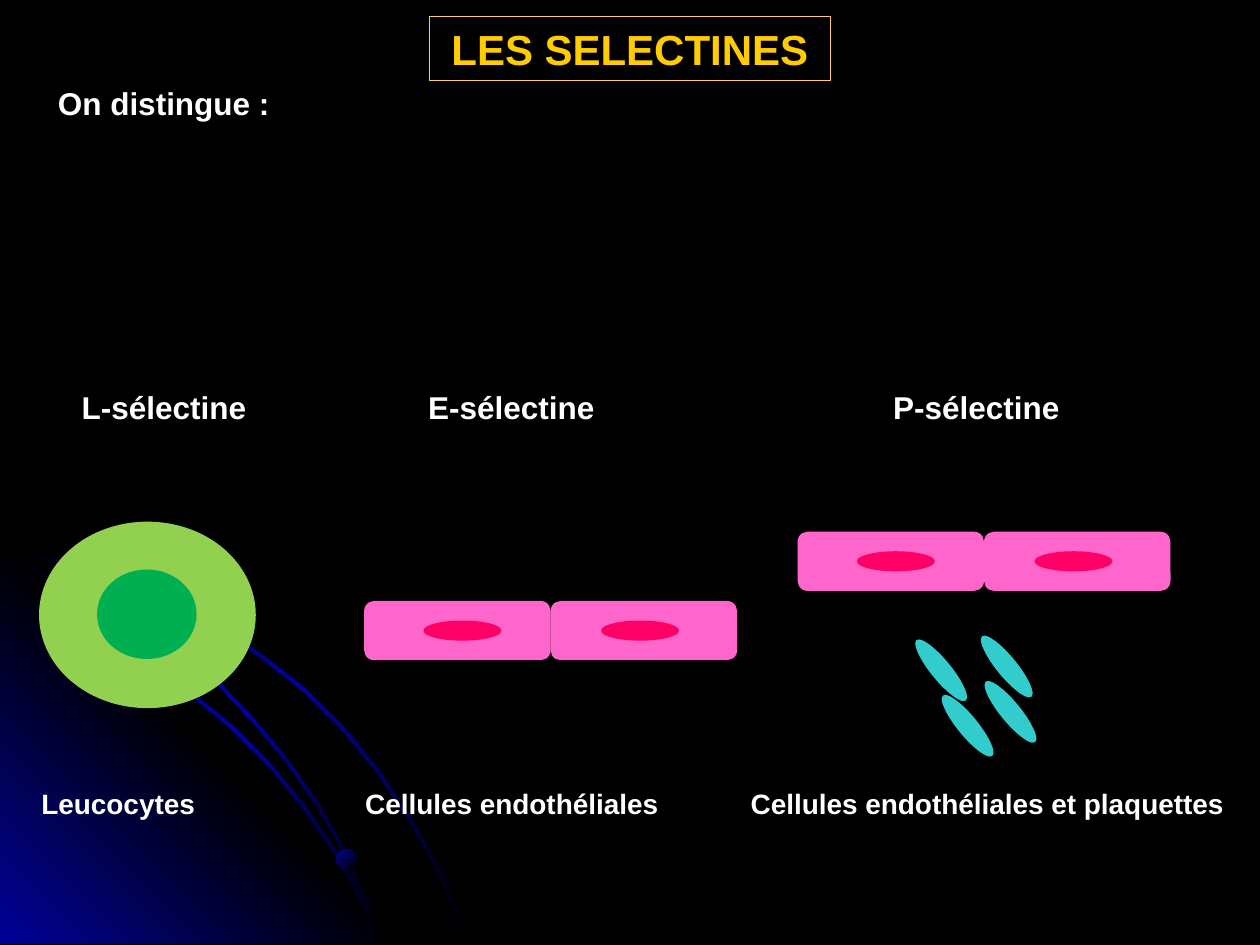
from copy import deepcopy

from lxml import etree
from pptx import Presentation
from pptx.dml.color import RGBColor
from pptx.enum.shapes import MSO_SHAPE
from pptx.enum.text import MSO_ANCHOR, PP_ALIGN
from pptx.oxml.ns import qn
from pptx.util import Inches, Pt

BLACK = RGBColor(0x00, 0x00, 0x00)
WHITE = RGBColor(0xFF, 0xFF, 0xFF)
BLUE = RGBColor(0x01, 0x01, 0x99)
GOLD = RGBColor(0xFF, 0xCC, 0x00)
FRAME = RGBColor(0xFF, 0xCC, 0x66)
LIGHT_GREEN = RGBColor(0x92, 0xD0, 0x50)
GREEN = RGBColor(0x00, 0xB0, 0x50)
PINK = RGBColor(0xFF, 0x66, 0xCC)
RED = RGBColor(0xFF, 0x00, 0x66)
TURQUOISE = RGBColor(0x33, 0xCC, 0xCC)

prs = Presentation()
prs.slide_width, prs.slide_height = Inches(10), Inches(7.5)
s = prs.slides.add_slide(prs.slide_layouts[5])
s.background.fill.solid()
s.background.fill.fore_color.rgb = BLACK


def set_gradient(sp, colors, angle):
    """Spread the colours evenly; the angle runs counter-clockwise."""
    sp.shadow.inherit = False
    sp.line.fill.background()
    sp.fill.gradient()
    sp.fill.gradient_angle = angle
    stops = sp.fill._fill._gradFill.gsLst
    while len(stops) < len(colors):
        stops.append(deepcopy(stops[-1]))
    for i, (stop, color) in enumerate(zip(sp.fill.gradient_stops, colors)):
        stop.color.rgb = color
        stop.position = i / (len(colors) - 1)


def add_solid(kind, x, y, w, h, color):
    sp = s.shapes.add_shape(kind, Inches(x), Inches(y), Inches(w), Inches(h))
    sp.shadow.inherit = False
    sp.fill.solid()
    sp.fill.fore_color.rgb = color
    sp.line.fill.background()
    return sp


# Background: a glowing corner and three thin arcs, each the lower edge of a band
BOTTOM, BAND = 7.49, 0.02
corner = [(0, 4.27), (3.22, BOTTOM), (0, BOTTOM)]
arcs = [
    [(0, 4.38), (0.28, 4.43), (0.56, 4.49), (0.97, 4.61), (1.35, 4.78),
     (1.73, 4.99), (2.08, 5.23), (2.41, 5.49), (2.71, 5.79), (2.98, 6.12),
     (3.23, 6.49), (3.37, 6.73), (3.5, 6.98), (3.6, 7.23), (3.7, BOTTOM)],
    [(0, 4.77), (0.39, 4.9), (0.77, 5.07), (1.15, 5.28), (1.5, 5.51),
     (1.83, 5.78), (2.13, 6.08), (2.4, 6.41), (2.65, 6.77), (2.85, 7.14),
     (2.94, 7.32), (3.01, BOTTOM)],
    [(0, 4.44), (0.36, 4.57), (0.74, 4.75), (1.09, 4.94), (1.42, 5.18),
     (1.73, 5.44), (2.02, 5.75), (2.27, 6.05), (2.52, 6.41), (2.67, 6.67),
     (2.8, 6.94), (2.92, 7.22), (3.01, BOTTOM)],
]
outlines = []
for arc in arcs:
    upper = [(x + BAND if x else 0, y if y == BOTTOM else y - BAND) for x, y in arc]
    outlines.append((arc + upper[::-1], [BLACK, BLUE, BLACK], 315))
outlines.insert(1, (corner, [BLUE, BLACK, BLUE], 45))

for points, colors, angle in outlines:
    points = [(Inches(x), Inches(y)) for x, y in points]
    fb = s.shapes.build_freeform(*points[0])
    fb.add_line_segments(points[1:], close=True)
    set_gradient(fb.convert_to_shape(), colors, angle)

bead = add_solid(MSO_SHAPE.OVAL, 2.67, 6.74, 0.16, 0.16, BLUE)
set_gradient(bead, [BLUE, BLACK], 315)

# Title
title = s.shapes.title
title.left, title.top = Inches(3.41), Inches(0.13)
title.width, title.height = Inches(3.18), Inches(0.51)
title.line.color.rgb = FRAME
title.line.width = Pt(0.75)
tf = title.text_frame
tf.vertical_anchor = MSO_ANCHOR.MIDDLE
p = tf.paragraphs[0]
p.alignment = PP_ALIGN.CENTER
r = p.add_run()
r.text = "LES SELECTINES"
r.font.name, r.font.size, r.font.bold = "Arial", Pt(24), True
r.font.color.rgb = GOLD

# Leucocyte
add_solid(MSO_SHAPE.OVAL, 0.31, 4.14, 1.72, 1.48, LIGHT_GREEN)
add_solid(MSO_SHAPE.OVAL, 0.77, 4.52, 0.79, 0.71, GREEN)

# Pairs of endothelial cells
for x, y in [(2.89, 4.77), (6.33, 4.22)]:
    for i in range(2):
        add_solid(MSO_SHAPE.ROUNDED_RECTANGLE, x + 1.48 * i, y, 1.48, 0.47, PINK)
    for i in range(2):
        add_solid(MSO_SHAPE.OVAL, x + 0.47 + 1.41 * i, y + 0.155, 0.62, 0.16, RED)

# Platelets
for x, y in [(7.39, 5.01), (7.6, 5.45), (7.94, 5.34), (7.91, 4.98)]:
    add_solid(MSO_SHAPE.OVAL, x, y, 0.16, 0.62, TURQUOISE).rotation = 320.7

# Text rows: left, top, width, height, left margin, size, tab stops, columns
rows = [
    (0.16, 0.62, 9.77, 0.4, 0.3, 18, [], ["On distingue :"]),
    (0.23, 6.19, 10.23, 0.37, 0.1, 16, [2.57, 5.63],
     ["Leucocytes", "Cellules endothéliales", "Cellules endothéliales et plaquettes"]),
    (0.55, 3.03, 9.38, 0.4, 0.1, 18, [2.75, 6.44],
     ["L-sélectine", "E-sélectine", "P-sélectine"]),
]
for x, y, w, h, margin, size, tabs, columns in rows:
    tf = s.shapes.add_textbox(Inches(x), Inches(y), Inches(w), Inches(h)).text_frame
    tf.word_wrap = True
    tf.margin_left = Inches(margin)
    p = tf.paragraphs[0]
    if tabs:
        tab_list = etree.SubElement(p._p.get_or_add_pPr(), qn("a:tabLst"))
        for tab in tabs:
            etree.SubElement(tab_list, qn("a:tab"), pos=str(Inches(tab)), algn="l")
    r = p.add_run()
    r.text = "\t".join(columns)
    r.font.name, r.font.size, r.font.bold = "Arial", Pt(size), True
    r.font.color.rgb = WHITE

prs.save("out.pptx")
